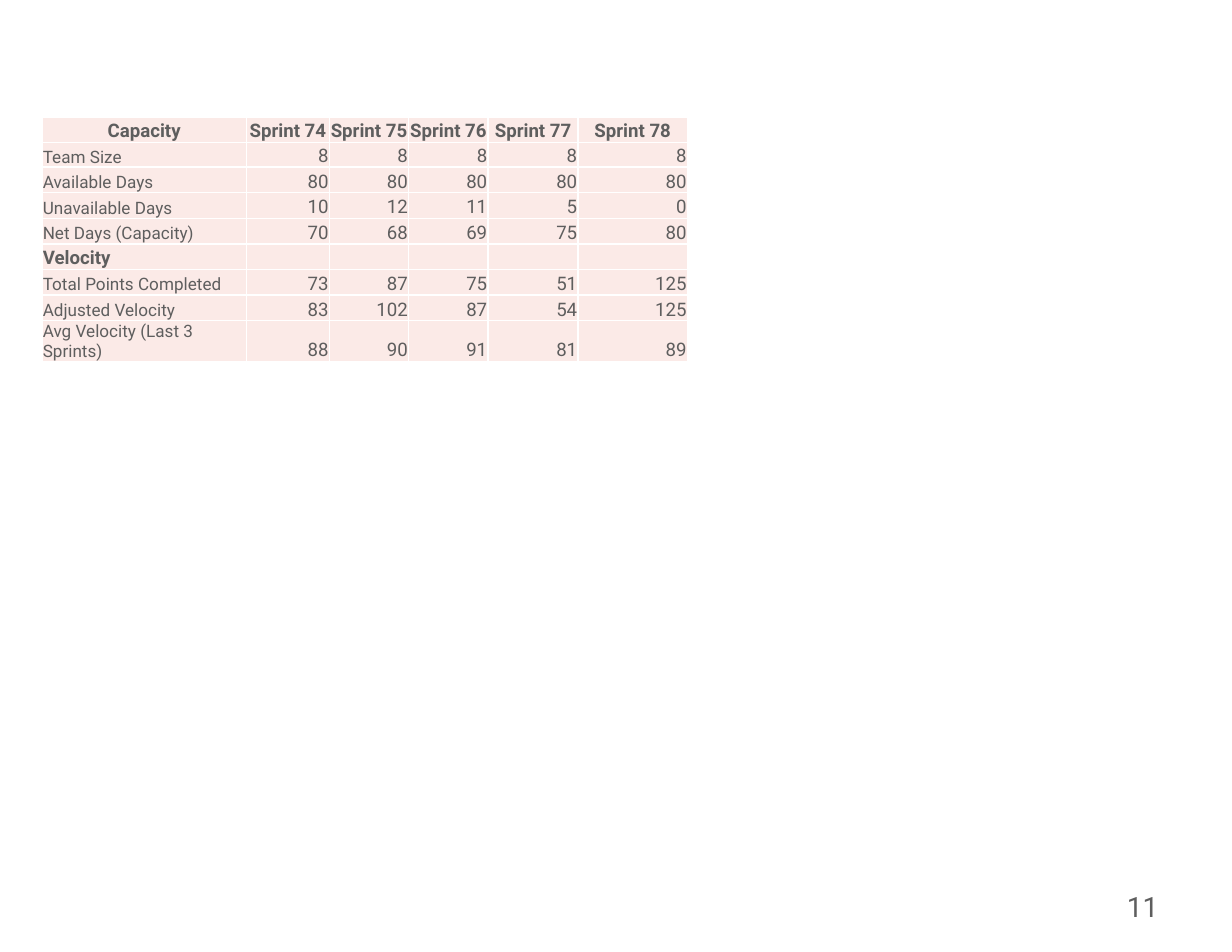
"""Build the sprint capacity and velocity slide."""
from dataclasses import dataclass

from lxml.etree import SubElement
from pptx import Presentation
from pptx.dml.color import RGBColor
from pptx.enum.text import MSO_ANCHOR as Anchor, PP_ALIGN as Align
from pptx.oxml.ns import qn
from pptx.util import Cm, Pt

FONT = "Roboto"
TEXT = "5E5E5E"
CELL_FILL = "FBEAE7"
BORDER = "FFFFFF"
COLUMN_WIDTHS = (4.64, 1.88, 1.8, 1.8, 2.04, 2.48)


@dataclass
class SprintRow:
    label: str
    values: tuple = ("",) * 5
    height: float = 0.58
    label_size: int = 11
    bold: bool = False
    label_align: Align = Align.LEFT
    value_align: Align = Align.RIGHT


ROWS = (
    SprintRow("Capacity", tuple(f"Sprint {number}" for number in range(74, 79)),
              label_size=12, bold=True, label_align=Align.CENTER, value_align=Align.CENTER),
    SprintRow("Team Size", (8,) * 5, height=0.56),
    SprintRow("Available Days", (80,) * 5),
    SprintRow("Unavailable Days", (10, 12, 11, 5, 0)),
    SprintRow("Net Days (Capacity)", (70, 68, 69, 75, 80)),
    SprintRow("Velocity", label_size=12, bold=True),
    SprintRow("Total Points Completed", (73, 87, 75, 51, 125)),
    SprintRow("Adjusted Velocity", (83, 102, 87, 54, 125)),
    SprintRow("Avg Velocity (Last 3 Sprints)", (88, 90, 91, 81, 89), height=0.66),
)


def colour(value: str) -> RGBColor:
    return RGBColor.from_string(value)


def format_text(para, size: int, align: Align, bold: bool = False) -> None:
    para.alignment = align
    for span in para.runs:
        span.font.name = FONT
        span.font.size = Pt(size)
        span.font.bold = bold
        span.font.color.rgb = colour(TEXT)
    if not para.runs:
        SubElement(para._p, qn("a:endParaRPr"), sz=str(size * 100))


def add_borders(cell) -> None:
    properties = cell._tc.get_or_add_tcPr()
    for index, side in enumerate(("lnL", "lnR", "lnT", "lnB")):
        line = SubElement(properties, qn(f"a:{side}"), w=str(Pt(1)))
        fill = SubElement(line, qn("a:solidFill"))
        SubElement(fill, qn("a:srgbClr"), val=BORDER)
        properties.insert(index, line)


def fill_cell(cell, value, size: int, align: Align, bold: bool) -> None:
    cell.fill.solid()
    cell.fill.fore_color.rgb = colour(CELL_FILL)
    cell.margin_left = cell.margin_right = cell.margin_top = Cm(0.02)
    cell.margin_bottom = Cm(0)
    cell.vertical_anchor = Anchor.BOTTOM
    cell.text_frame.text = str(value)
    format_text(cell.text_frame.paragraphs[0], size, align, bold)
    add_borders(cell)


def add_sprint_table(page, rows: tuple) -> None:
    width = Cm(sum(COLUMN_WIDTHS))
    height = Cm(sum(row.height for row in rows))
    table = page.shapes.add_table(len(rows), len(COLUMN_WIDTHS),
                                  Cm(0.95), Cm(2.65), width, height).table
    for column, column_width in zip(table.columns, COLUMN_WIDTHS):
        column.width = Cm(column_width)
    for index, row in enumerate(rows):
        table.rows[index].height = Cm(row.height)
        fill_cell(table.cell(index, 0), row.label, row.label_size, row.label_align, row.bold)
        for column, value in enumerate(row.values, start=1):
            fill_cell(table.cell(index, column), value, 12, row.value_align, row.bold)


def add_page_number(page, number: int) -> None:
    box = page.shapes.add_textbox(Cm(20.02), Cm(20.02), Cm(6.53), Cm(1.14))
    frame = box.text_frame
    frame.word_wrap = True
    frame.margin_left = frame.margin_right = Cm(0.28)
    frame.margin_top = frame.margin_bottom = Cm(0.15)
    frame.text = str(number)
    format_text(frame.paragraphs[0], 18, Align.RIGHT)


def main() -> None:
    deck = Presentation()
    deck.slide_width, deck.slide_height = Cm(27.94), Cm(21.59)
    page = deck.slides.add_slide(deck.slide_layouts[6])
    add_sprint_table(page, ROWS)
    add_page_number(page, 11)
    deck.save("out.pptx")


if __name__ == "__main__":
    main()
